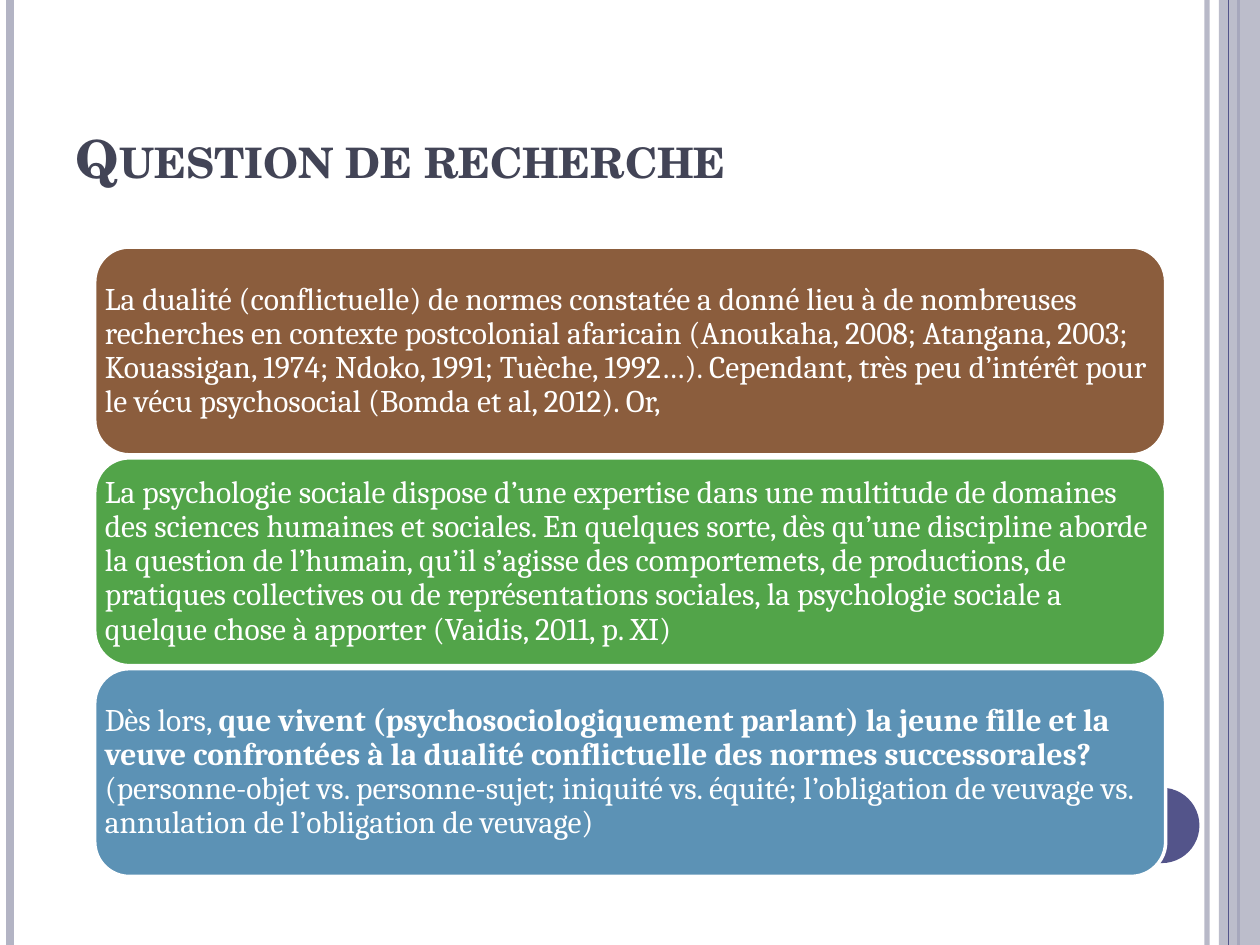
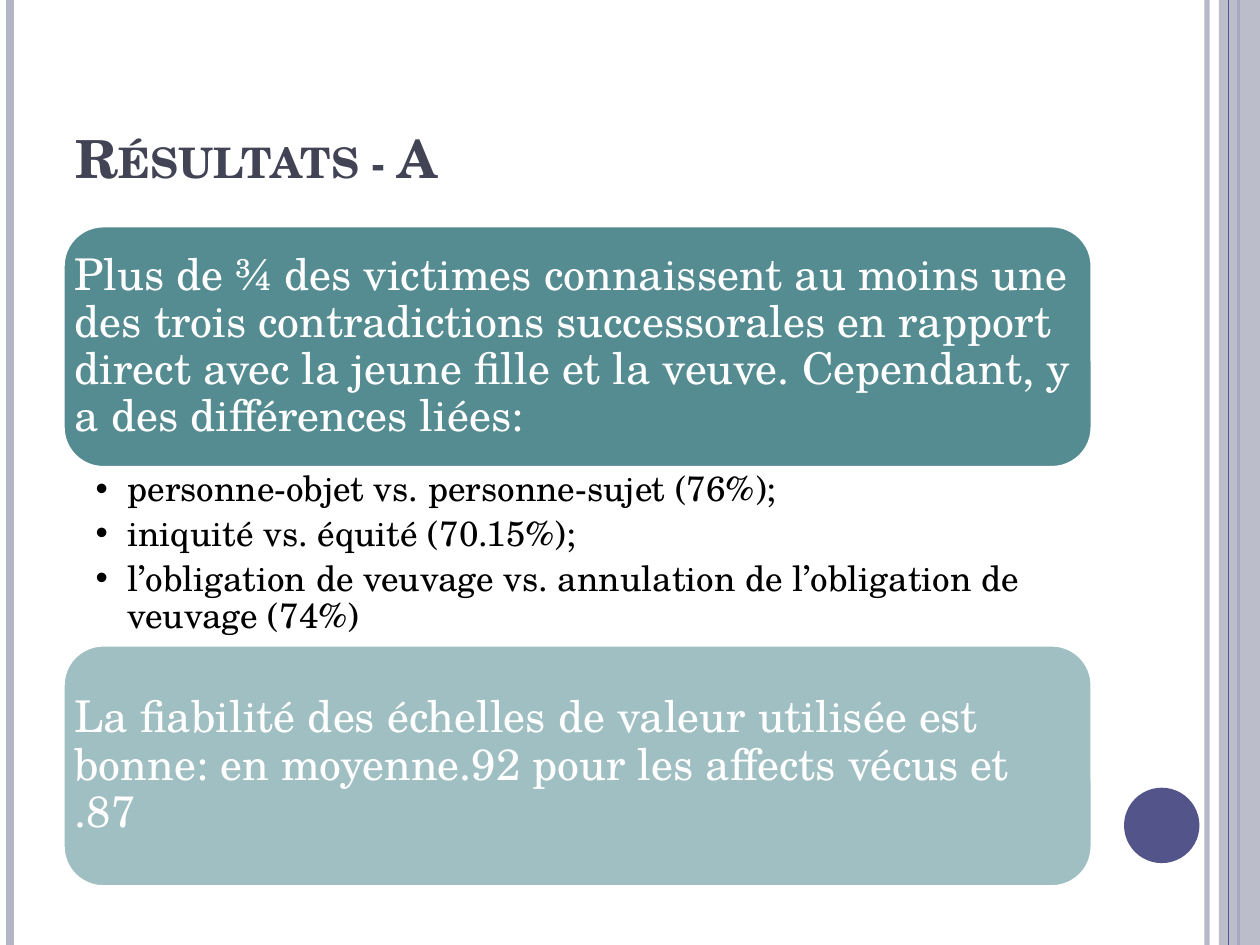
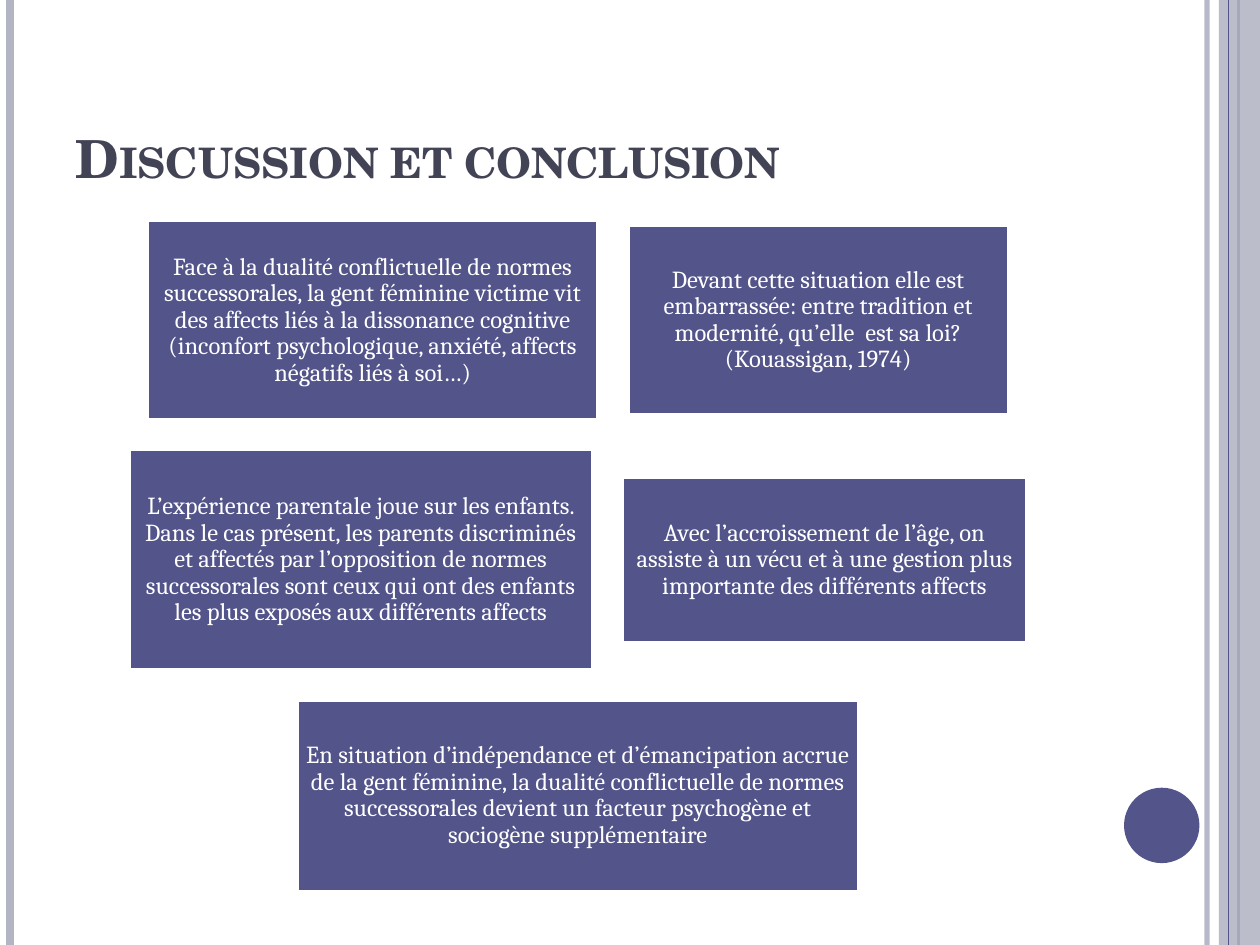
import pptx
import pptx.dml.color
import pptx.enum.shapes
import pptx.enum.text
import pptx.oxml.ns
import pptx.oxml.xmlchemy
import pptx.util

Cm = pptx.util.Cm
Pt = pptx.util.Pt
RGB = pptx.dml.color.RGBColor
Kind = pptx.enum.shapes.MSO_SHAPE
Align = pptx.enum.text.PP_ALIGN
Anchor = pptx.enum.text.MSO_ANCHOR
Fit = pptx.enum.text.MSO_AUTO_SIZE
sub = pptx.oxml.xmlchemy.OxmlElement

WHITE = RGB(0xFF, 0xFF, 0xFF)
BLACK = RGB(0, 0, 0)
SLATE = RGB(0x42, 0x44, 0x56)
GREY = RGB(0xB3, 0xB4, 0xC4)
INDIGO = RGB(0x53, 0x54, 0x8A)
BROWN = RGB(0x8B, 0x5D, 0x3D)
GREEN = RGB(0x52, 0xA4, 0x49)
BLUE = RGB(0x5C, 0x92, 0xB5)
TEAL = RGB(0x43, 0x80, 0x86)

SERIF = "Cambria"
SCHOOL = "TeX Gyre Schola"
WIDE, HIGH = 25.4, 19.05


def fade(item, share):
    """Make the colours of a shape or line opaque to the given percentage."""
    for color in item.element.xpath("./p:spPr//a:srgbClr"):
        alpha = sub("a:alpha")
        alpha.set("val", str(share * 1000))
        color.append(alpha)


def rule(slide, x, color, width):
    """Draw a line down the full height of the slide."""
    line = slide.shapes.add_connector(
        pptx.enum.shapes.MSO_CONNECTOR.STRAIGHT, Cm(x), 0, Cm(x), Cm(HIGH))
    line.line.color.rgb = color
    line.line.width = Pt(width)
    line.element.spPr.append(sub("a:effectLst"))
    return line


def plain(slide, kind, x, y, w, h, color):
    shape = slide.shapes.add_shape(kind, Cm(x), Cm(y), Cm(w), Cm(h))
    shape.shadow.inherit = False
    shape.fill.solid()
    shape.fill.fore_color.rgb = color
    shape.line.fill.background()
    return shape


def inset(frame, left, top, right, bottom):
    frame.margin_left, frame.margin_top = Cm(left), Cm(top)
    frame.margin_right, frame.margin_bottom = Cm(right), Cm(bottom)


def write(par, text, font, size, color, bold=False):
    run = par.add_run()
    run.text = text
    run.font.name = font
    run.font.size = Pt(size)
    run.font.color.rgb = color
    run.font.bold = bold
    return run


def card(slide, kind, place, color, runs, font, size, align=Align.LEFT, pad=0):
    """Add a filled box; runs is a list of (text, bold) pairs."""
    box = plain(slide, kind, *place, color)
    box.line.color.rgb = WHITE
    box.line.width = Pt(2)
    frame = box.text_frame
    frame.word_wrap = True
    frame.vertical_anchor = Anchor.MIDDLE
    inset(frame, pad, pad, pad, pad)
    par = frame.paragraphs[0]
    par.alignment = align
    par.line_spacing = 0.9
    for text, bold in runs:
        write(par, text, font, size, WHITE, bold)
    return box


def dress(slide, master):
    """Build the side bands and the title place, and keep them on the master."""
    fade(rule(slide, 24.33, GREY, 3), 93)
    rule(slide, 0.21, GREY, 4.5)
    rule(slide, 24.97, INDIGO, 1.5)
    fade(plain(slide, Kind.RECTANGLE, 24.57, 0, 0.83, HIGH, GREY), 87)
    rule(slide, 24.77, INDIGO, 0.75)
    plain(slide, Kind.OVAL, 22.66, 15.88, 1.52, 1.52, INDIGO)
    decor = [s for s in slide.shapes if not s.is_placeholder]
    for number, item in enumerate(decor, 20):
        item.element.xpath(".//p:cNvPr")[0].set("id", str(number))
        master.shapes.element.append(item.element)

    title = master.placeholders[0]
    title.left, title.top = Cm(1.27), Cm(0.76)
    title.width, title.height = Cm(20.75), Cm(3.18)
    title.text_frame.vertical_anchor = Anchor.BOTTOM


def head(slide, text):
    frame = slide.shapes.title.text_frame
    frame.auto_size = Fit.NONE
    par = frame.paragraphs[0]
    par.alignment = Align.LEFT
    run = write(par, text, SCHOOL, 30, SLATE, True)
    run.font._element.set("cap", "small")


def points(slide, place, items):
    """Fill the body placeholder with a bulleted list."""
    body = slide.placeholders[1]
    body.left, body.top, body.width, body.height = map(Cm, place)
    frame = body.text_frame
    frame.auto_size = Fit.NONE
    inset(frame, 0.66, 0.08, 0.48, 0.08)
    for i, text in enumerate(items):
        par = frame.add_paragraph() if i else frame.paragraphs[0]
        par.line_spacing = 0.9
        par.space_before, par.space_after = Pt(0), Pt(4)
        props = par._p.get_or_add_pPr()
        props.set("marL", str(Cm(0.64)))
        props.set("indent", str(-Cm(0.64)))
        write(par, text, SCHOOL, 20, BLACK)


def ask(slide):
    head(slide, "Question de recherche")
    cards = [
        (BROWN, [("La dualité (conflictuelle) de normes constatée a donné lieu à "
                  "de nombreuses recherches en contexte postcolonial afaricain "
                  "(Anoukaha, 2008; Atangana, 2003; Kouassigan, 1974; Ndoko, 1991; "
                  "Tuèche, 1992…). Cependant, très peu d’intérêt pour le vécu "
                  "psychosocial (Bomda et al, 2012). Or,", False)]),
        (GREEN, [("La psychologie sociale dispose d’une expertise dans une "
                  "multitude de domaines des sciences humaines et sociales. En "
                  "quelques sorte, dès qu’une discipline aborde la question de "
                  "l’humain, qu’il s’agisse des comportemets, de productions, de "
                  "pratiques collectives ou de représentations sociales, la "
                  "psychologie sociale a quelque chose à apporter "
                  "(Vaidis, 2011, p. XI)", False)]),
        (BLUE, [("Dès lors, ", False),
                ("que vivent (psychosociologiquement parlant) la jeune fille et "
                 "la veuve confrontées à la dualité conflictuelle des normes "
                 "successorales? ", True),
                ("(personne-objet vs. personne-sujet; iniquité vs. équité; "
                 "l’obligation de veuvage vs. annulation de l’obligation de "
                 "veuvage)", False)]),
    ]
    for i, (color, runs) in enumerate(cards):
        place = (1.91, 4.98 + i * 4.25, 21.59, 4.19)
        card(slide, Kind.ROUNDED_RECTANGLE, place, color, runs, SERIF, 18)


def result(slide):
    head(slide, "Résultats - A")
    points(slide, (1.27, 9.42, 20.75, 3.58), [
        "personne-objet vs. personne-sujet (76%);",
        "iniquité vs. équité (70.15%);",
        "l’obligation de veuvage vs. annulation de l’obligation de veuvage (74%)",
    ])
    cards = [
        (4.55, 90, "Plus de ¾ des victimes connaissent au moins une des trois "
                   "contradictions successorales en rapport direct avec la jeune "
                   "fille et la veuve. Cependant, y a des différences liées:"),
        (13, 50, "La fiabilité des échelles de valeur utilisée est bonne: en "
                 "moyenne.92 pour les affects vécus et .87"),
    ]
    for top, share, text in cards:
        box = card(slide, Kind.ROUNDED_RECTANGLE, (1.27, top, 20.75, 4.88), TEAL,
                   [(text, False)], SCHOOL, 25)
        fade_fill(box, share)


def fade_fill(box, share):
    """Fade a box but keep its outline solid."""
    fade(box, share)
    for alpha in box.element.xpath("./p:spPr/a:ln//a:alpha"):
        alpha.getparent().remove(alpha)


def close(slide):
    head(slide, "Discussion et conclusion")
    rows = [
        [(9.09, 4.01, "Face à la dualité conflictuelle de normes successorales, la "
                      "gent féminine victime vit des affects liés à la dissonance "
                      "cognitive (inconfort psychologique, anxiété, affects "
                      "négatifs liés à soi…)"),
         (7.67, 3.81, "Devant cette situation elle est embarrassée: entre tradition "
                      "et modernité, qu’elle  est sa loi? (Kouassigan, 1974)")],
        [(9.35, 4.45, "L’expérience parentale joue sur les enfants. Dans le cas "
                      "présent, les parents discriminés et affectés par "
                      "l’opposition de normes successorales sont ceux qui ont des "
                      "enfants les plus exposés aux différents affects"),
         (8.15, 3.33, "Avec l’accroissement de l’âge, on assiste à un vécu et à une "
                      "gestion plus importante des différents affects")],
        [(11.33, 3.86, "En situation d’indépendance et d’émancipation accrue de la "
                       "gent féminine, la dualité conflictuelle de normes "
                       "successorales devient un facteur psychogène et sociogène "
                       "supplémentaire")],
    ]
    mid, gap, top = 11.65, 0.6, 4.45
    for row in rows:
        tall = max(h for _, h, _ in row)
        left = mid - (sum(w for w, _, _ in row) + gap * (len(row) - 1)) / 2
        for w, h, text in row:
            place = (left, top + (tall - h) / 2, w, h)
            card(slide, Kind.RECTANGLE, place, INDIGO, [(text, False)], SERIF, 14,
                 Align.CENTER, 0.15)
            left += w + gap
        top += tall + gap


def main():
    deck = pptx.Presentation()
    deck.slide_width, deck.slide_height = Cm(WIDE), Cm(HIGH)
    lists, titled = deck.slide_layouts[1], deck.slide_layouts[5]
    first = deck.slides.add_slide(titled)
    dress(first, deck.slide_master)
    ask(first)
    result(deck.slides.add_slide(lists))
    close(deck.slides.add_slide(titled))
    deck.save("out.pptx")


if __name__ == "__main__":
    main()
